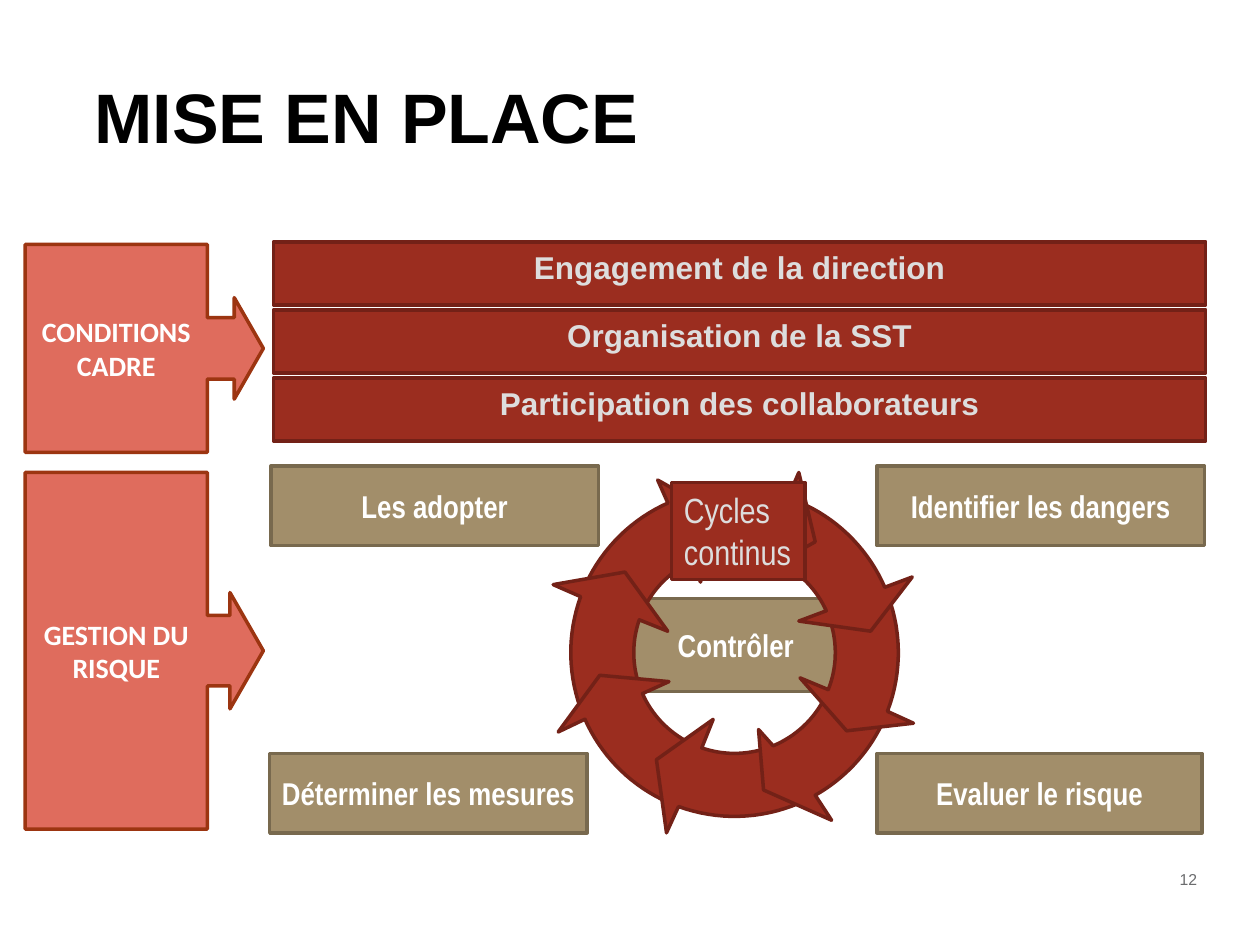
from math import cos, sin, radians
from pptx import Presentation
from pptx.util import Inches, Pt
from pptx.dml.color import RGBColor
from pptx.enum.shapes import MSO_SHAPE
from pptx.enum.text import PP_ALIGN, MSO_ANCHOR

RED, TAN, CORAL = ("9B2D1F", "732117"), ("A28E6A", "78694E"), ("DF6C5D", "9C3511")
PALE, WHITE = "DDDDDD", "FFFFFF"

TITLE = "MISE EN PLACE"
BARS = ["Engagement de la direction", "Organisation de la SST",
        "Participation des collaborateurs"]
BAR_TOP, BAR_STEP = 1.92, 0.54
STEPS = [("Contrôler", 4.66, 4.75, 2.36, 0.74),
         ("Evaluer le risque", 6.96, 5.98, 2.58, 0.63),
         ("Identifier les dangers", 6.96, 3.7, 2.6, 0.63),
         ("Les adopter", 2.15, 3.7, 2.6, 0.63),
         ("Déterminer les mesures", 2.14, 5.98, 2.52, 0.63)]
CALLS = [("GESTION DU RISQUE", 3.75, 2.83), ("CONDITIONS CADRE", 1.94, 1.65)]
ADJUST = (0.296, 0.244, 0.14, 0.765)

MID, OUTER, INNER = (5.83, 5.18), 1.3, 0.8
ARROWS = [
    ((205, 246), (245, 205), [(5.22, 3.81), (5.68, 4.07), (5.56, 4.62)]),
    ((157.5, 200), (199, 163.5), [(4.39, 4.64), (4.96, 4.54), (5.3, 5.01)]),
    ((116.5, 156), (156, 116.5), [(4.43, 5.81), (4.76, 5.36), (5.31, 5.41)]),
    ((67, 110), (109, 73.5), [(5.29, 6.61), (5.21, 6.03), (5.66, 5.71)]),
    ((26, 60.5), (67.5, 26), [(6.6, 6.51), (6.06, 6.27), (6.02, 5.79)]),
    ((-23.5, 21), (21.5, -17.5), [(7.25, 5.74), (6.72, 5.8), (6.35, 5.38)]),
    ((-64, -23.5), (-24.5, -63.5), [(7.24, 4.58), (6.91, 5.01), (6.34, 4.93)]),
    ((253, 289), (287, 254), [(6.34, 3.75), (6.47, 4.3), (5.99, 4.57)]),
]

deck = Presentation()
deck.slide_width, deck.slide_height = Inches(10), Inches(7.5)
slide = deck.slides.add_slide(deck.slide_layouts[6])
shapes = slide.shapes


def tint(code):
    return RGBColor.from_string(code)


def paint(shape, pair):
    shape.shadow.inherit = False
    shape.fill.solid()
    shape.fill.fore_color.rgb = tint(pair[0])
    shape.line.color.rgb = tint(pair[1])
    shape.line.width = Pt(2)


def write(shape, text, size, font, color, bold=True, align=PP_ALIGN.CENTER,
          anchor=MSO_ANCHOR.MIDDLE, wrap=True):
    frame = shape.text_frame
    frame.text = text
    frame.word_wrap = wrap
    frame.vertical_anchor = anchor
    for para in frame.paragraphs:
        para.alignment = align
        for run in para.runs:
            run.font.size, run.font.name, run.font.bold = Pt(size), font, bold
            run.font.color.rgb = tint(color)
    return frame


def block(kind, pair, *spot):
    shape = shapes.add_shape(kind, *map(Inches, spot))
    paint(shape, pair)
    return shape


def label(*spot):
    return shapes.add_textbox(*map(Inches, spot))


def arc(radius, start, end, count=16):
    turns = [radians(start + (end - start) * i / count) for i in range(count + 1)]
    return [(MID[0] + radius * cos(t), MID[1] + radius * sin(t)) for t in turns]


for text, *spot in STEPS:
    write(block(MSO_SHAPE.RECTANGLE, TAN, *spot), text, 18, "Arial Narrow",
          WHITE, wrap=False)

for row, text in enumerate(BARS):
    bar = block(MSO_SHAPE.RECTANGLE, RED, 2.17, BAR_TOP + row * BAR_STEP, 7.4, 0.5)
    write(bar, text, 18, "Arial", PALE, anchor=MSO_ANCHOR.TOP)

head = write(label(0.75, 0.29, 8.5, 1.25), TITLE, 40, "Arial", "000000",
             align=PP_ALIGN.LEFT)
head.margin_left = head.margin_right = 0

for outer, inner, tip in ARROWS:
    ring = arc(OUTER, *outer) + tip + arc(INNER, *inner)
    dots = [(Inches(x), Inches(y)) for x, y in ring]
    pen = shapes.build_freeform(*dots[0])
    pen.add_line_segments(dots[1:], close=True)
    paint(pen.convert_to_shape(), RED)

write(block(MSO_SHAPE.RECTANGLE, RED, 5.33, 3.83, 1.06, 0.77), "Cycles\ncontinus",
      20, "Arial Narrow", PALE, False, PP_ALIGN.LEFT, MSO_ANCHOR.TOP, False)

write(label(9.05, 6.82, 0.55, 0.31), "12", 9, "Arial", "6B6C6E", False, PP_ALIGN.RIGHT)

for text, top, high in CALLS:
    call = block(MSO_SHAPE.RIGHT_ARROW_CALLOUT, CORAL, 0.2, top, 1.89, high)
    for i, value in enumerate(ADJUST):
        call.adjustments[i] = value
    write(call, text, 16, "Calibri", WHITE)

deck.save("out.pptx")
